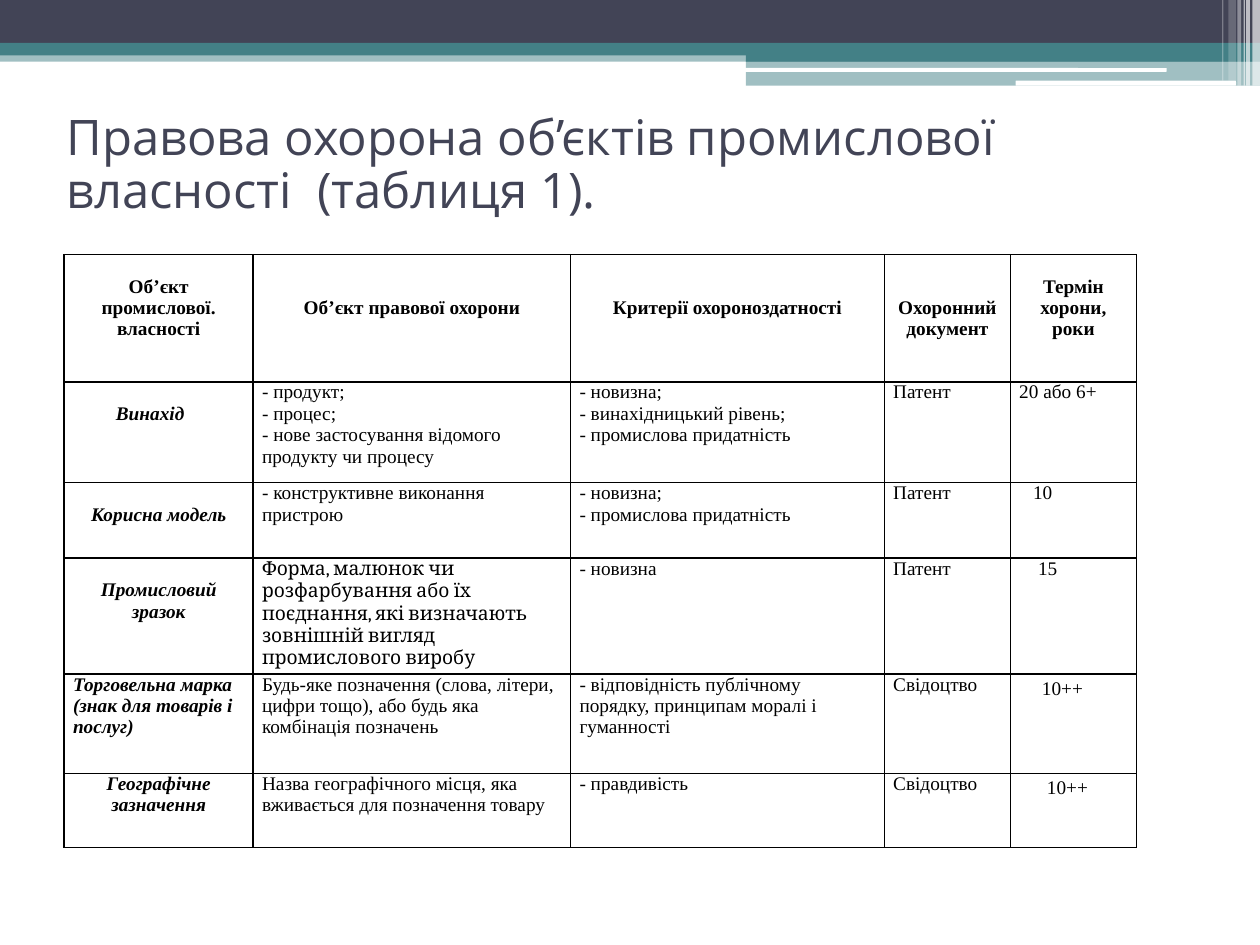
"""Builds a slide with a table on the legal protection of industrial property."""
import dataclasses

import lxml.etree
import pptx
import pptx.dml.color
import pptx.enum.shapes
import pptx.enum.text
import pptx.oxml.ns
import pptx.util

SHAPES = pptx.enum.shapes.MSO_SHAPE
ALIGN = pptx.enum.text.PP_ALIGN


@dataclasses.dataclass(frozen=True)
class Theme:
    """Colours, fonts and type sizes of the slide."""
    dark: str = "424456"
    teal: str = "438086"
    white: str = "FFFFFF"
    ink: str = "000000"
    title_font: str = "Open Sans"
    table_font: str = "Times New Roman"
    accent_font: str = "Cambria"
    title_size: int = 28
    table_size: int = 11
    border_width: int = 1


@dataclasses.dataclass(frozen=True)
class Entry:
    """Text of one table cell with its lines of space above and its indent."""
    text: str
    lines: float = 0
    indent: int = 0
    centred: bool = False
    font: str = ""


THEME = Theme()
GRID_COLUMNS, GRID_ROWS = 1000, 750
UNIT = pptx.util.Inches(10) // GRID_COLUMNS
LINE_HEIGHT = 17
CELL_MARGIN = 7

BANDS = [
    (0, 40, 1000, 9, THEME.teal, 50),
    (0, 0, 1000, 34, THEME.dark, 100),
    (0, 34, 1000, 10, THEME.teal, 100),
    (592, 39, 408, 10, THEME.teal, 100),
    (592, 48, 408, 20, THEME.teal, 50),
]
RULES = [(591, 54, 335, 3, THEME.white, 100), (806, 64, 175, 4, THEME.white, 100)]
STRIPES = [
    (994, 6, 68, 65), (989, 3, 68, 65), (987, 1, 68, 60),
    (982, 3, 68, 40), (975, 6, 64, 20), (970, 1, 64, 30),
]

TABLE_COLUMNS = [150, 252, 249, 100, 100]
TABLE_ROWS = [101, 80, 60, 79, 79, 59]
HEADER = [
    Entry("Об’єкт промислової. власності", 1, centred=True),
    Entry("Об’єкт правової охорони", 2, centred=True),
    Entry("Критерії охороноздатності", 2, centred=True),
    Entry("Охоронний\nдокумент", 2, centred=True),
    Entry("Термін хорони,\nроки", 1, centred=True),
]
BODY = [
    [Entry("Винахід", 1, 34),
     Entry("- продукт;\n- процес;\n- нове застосування відомого продукту чи процесу"),
     Entry("- новизна;\n- винахідницький рівень;\n- промислова придатність"),
     Entry("Патент"), Entry("20 або 6+")],
    [Entry("Корисна модель", 1, centred=True),
     Entry("- конструктивне виконання пристрою"),
     Entry("- новизна;\n- промислова придатність"),
     Entry("Патент"), Entry("10", indent=11)],
    [Entry("Промисловий зразок", 1, centred=True),
     Entry("Форма, малюнок чи розфарбування або їх поєднання, які визначають "
           "зовнішній вигляд промислового виробу", font=THEME.accent_font),
     Entry("- новизна"), Entry("Патент"), Entry("15", indent=15)],
    [Entry("Торговельна марка (знак для товарів і послуг)"),
     Entry("Будь-яке позначення (слова, літери, цифри тощо), або будь яка "
           "комбінація позначень"),
     Entry("- відповідність публічному порядку, принципам моралі і гуманності"),
     Entry("Свідоцтво"), Entry("10++", 0.2, 18)],
    [Entry("Географічне зазначення", centred=True),
     Entry("Назва географічного місця, яка вживається для позначення товару"),
     Entry("- правдивість"), Entry("Свідоцтво"), Entry("10++", 0.2, 22)],
]


def grid(*units):
    """Turn grid units into slide lengths."""
    return [round(unit * UNIT) for unit in units]


def set_values(target, values):
    """Set attributes of an object from a dict."""
    for name, value in values.items():
        setattr(target, name, value)


def paint(fill, colour):
    """Give a fill one solid colour."""
    fill.solid()
    fill.fore_color.rgb = pptx.dml.color.RGBColor.from_string(colour)


def format_font(font, name, size, colour, **styles):
    """Set typeface, size, colour and further styles of a font."""
    set_values(font, {"name": name, "size": pptx.util.Pt(size), **styles})
    font.color.rgb = pptx.dml.color.RGBColor.from_string(colour)


def add_band(slide, kind, left, top, width, height, colour, opacity):
    """Add a borderless bar with an opacity in percent."""
    shape = slide.shapes.add_shape(kind, *grid(left, top, width, height))
    shape.shadow.inherit = False
    shape.line.fill.background()
    paint(shape.fill, colour)
    if opacity < 100:
        colour_element = shape.fill._xPr.find(".//" + pptx.oxml.ns.qn("a:srgbClr"))
        lxml.etree.SubElement(
            colour_element, pptx.oxml.ns.qn("a:alpha"), val=str(opacity * 1000))
    return shape


def add_title(slide, text):
    """Add the slide title."""
    frame = slide.shapes.add_textbox(*grid(43, 90, 900, 108)).text_frame
    set_values(frame, {"word_wrap": True, "margin_top": 0, "margin_bottom": 0})
    paragraph = frame.paragraphs[0]
    paragraph.text = text
    paragraph.line_spacing = 0.9
    format_font(paragraph.runs[0].font, THEME.title_font, THEME.title_size, THEME.dark)


def add_borders(cell):
    """Draw a line on all four sides of a cell."""
    properties = cell._tc.get_or_add_tcPr()
    for position, side in enumerate(("lnL", "lnR", "lnT", "lnB")):
        line = lxml.etree.Element(
            pptx.oxml.ns.qn("a:" + side), w=str(pptx.util.Pt(THEME.border_width)))
        fill = lxml.etree.SubElement(line, pptx.oxml.ns.qn("a:solidFill"))
        lxml.etree.SubElement(fill, pptx.oxml.ns.qn("a:srgbClr"), val=THEME.ink)
        properties.insert(position, line)


def fill_cell(cell, entry, bold, italic):
    """Write and format one table cell."""
    left, right, top = grid(
        CELL_MARGIN + entry.indent, CELL_MARGIN, entry.lines * LINE_HEIGHT)
    set_values(cell, {"text": entry.text, "margin_left": left, "margin_right": right,
                      "margin_top": top, "margin_bottom": 0})
    for paragraph in cell.text_frame.paragraphs:
        paragraph.alignment = ALIGN.CENTER if entry.centred else ALIGN.LEFT
        for run in paragraph.runs:
            format_font(run.font, entry.font or THEME.table_font, THEME.table_size,
                        THEME.ink, bold=bold, italic=italic)
    paint(cell.fill, THEME.white)
    add_borders(cell)


def add_property_table(slide):
    """Add the table of industrial property objects."""
    entries = [HEADER, *BODY]
    table = slide.shapes.add_table(
        len(TABLE_ROWS), len(TABLE_COLUMNS),
        *grid(51, 202, sum(TABLE_COLUMNS), sum(TABLE_ROWS))).table
    set_values(table, {"first_row": False, "horz_banding": False})
    for column, width in zip(table.columns, grid(*TABLE_COLUMNS)):
        column.width = width
    for row, height in zip(table.rows, grid(*TABLE_ROWS)):
        row.height = height
    for row_index, row_entries in enumerate(entries):
        for column_index, entry in enumerate(row_entries):
            is_header, is_name = row_index == 0, column_index == 0
            fill_cell(table.cell(row_index, column_index), entry,
                      bold=is_header or is_name, italic=is_name and not is_header)


def main():
    """Build and save the presentation."""
    presentation = pptx.Presentation()
    width, height = grid(GRID_COLUMNS, GRID_ROWS)
    set_values(presentation, {"slide_width": width, "slide_height": height})
    slide = presentation.slides.add_slide(presentation.slide_layouts[6])
    for band in BANDS:
        add_band(slide, SHAPES.RECTANGLE, *band)
    for rule in RULES:
        add_band(slide, SHAPES.ROUNDED_RECTANGLE, *rule)
    for left, stripe_width, stripe_height, opacity in STRIPES:
        add_band(slide, SHAPES.RECTANGLE, left, 0, stripe_width, stripe_height,
                 THEME.white, opacity)
    add_title(slide, "Правова охорона об’єктів промислової власності  (таблиця 1).")
    add_property_table(slide)
    presentation.save("out.pptx")


if __name__ == "__main__":
    main()
